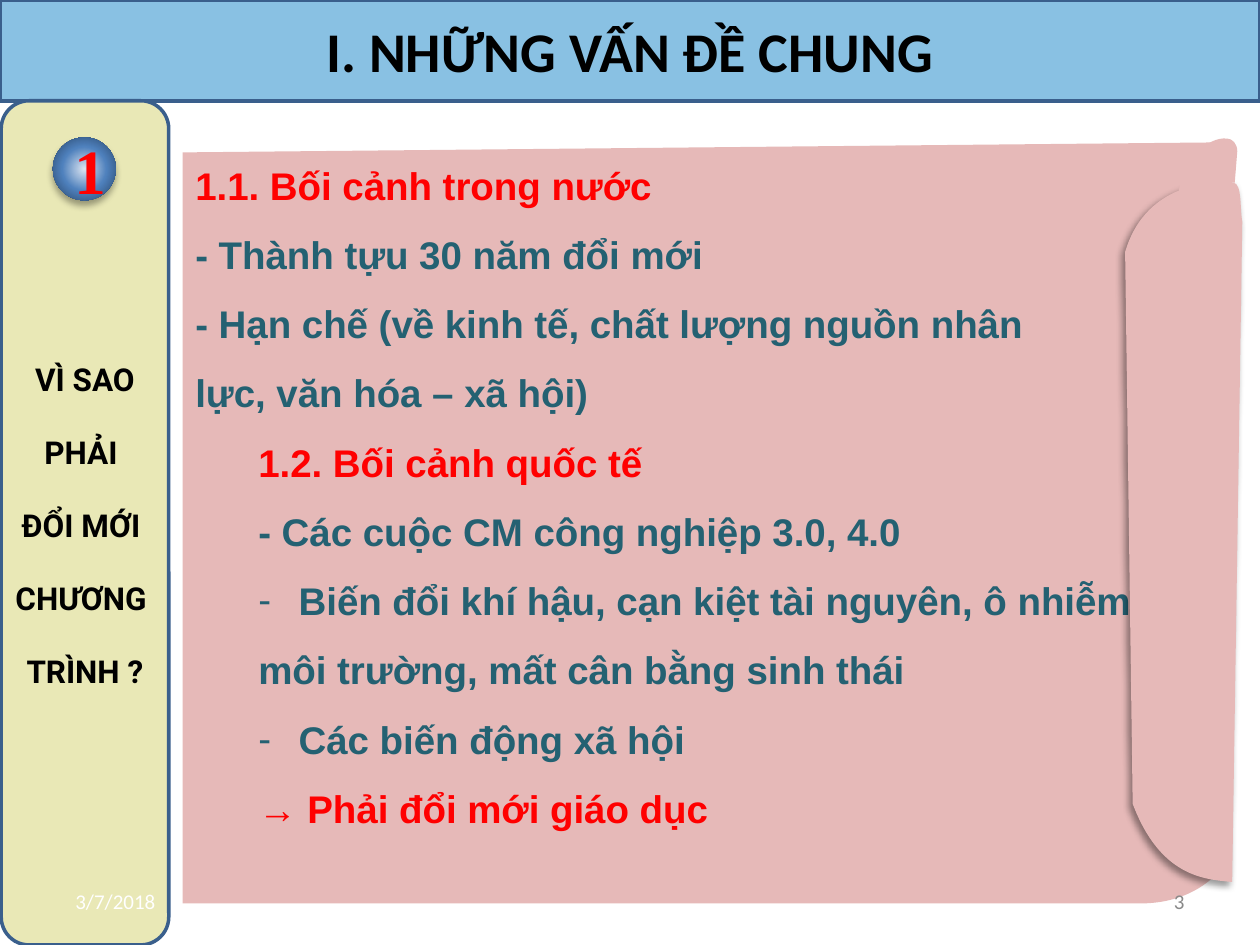
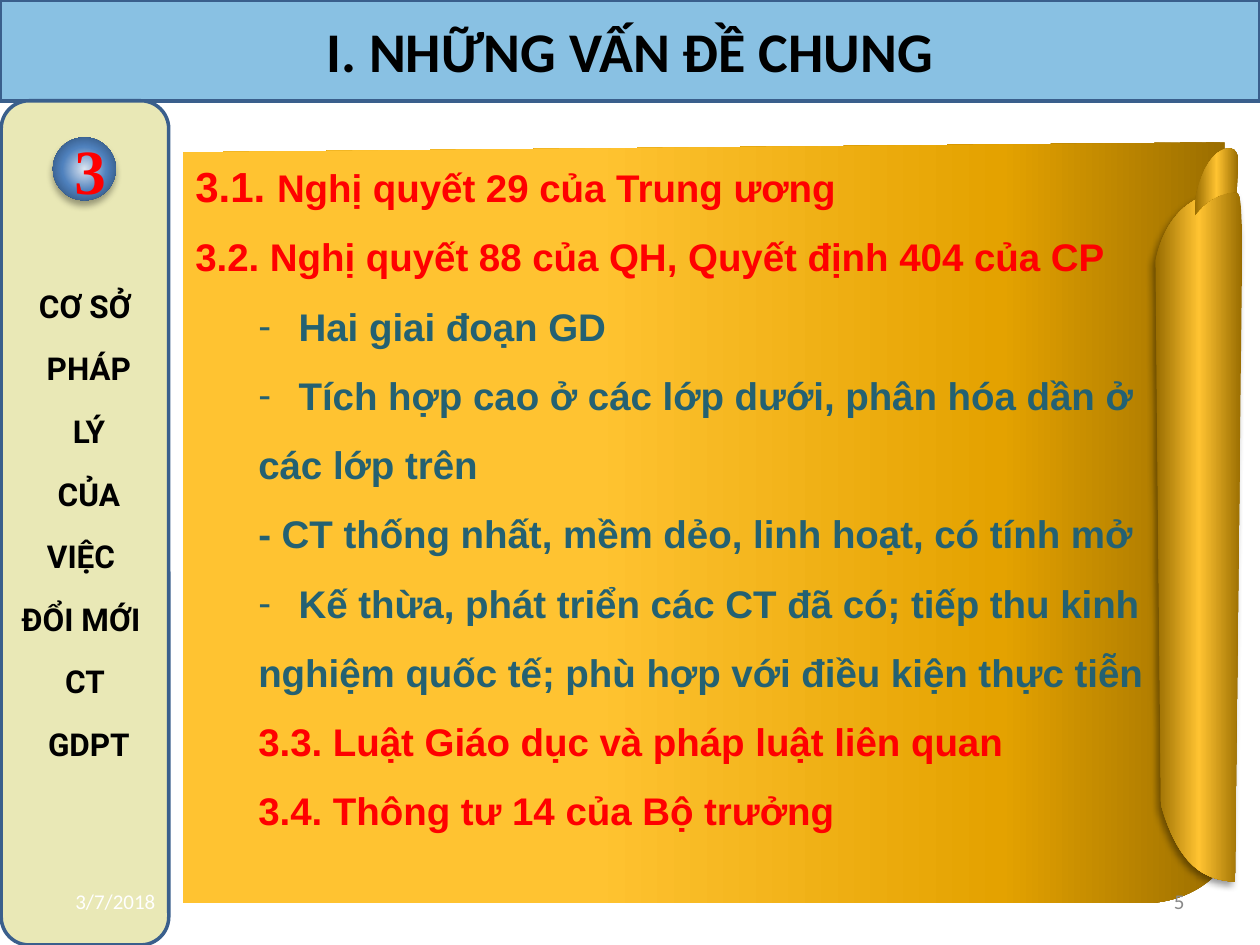
"""Two slides on general issues of the curriculum reform, each a scroll beside a side banner."""
from lxml import etree
from pptx import Presentation
from pptx import util as u
from pptx.dml.color import RGBColor
from pptx.enum import shapes, text
from pptx.oxml import ns

BLACK = RGBColor(0x00, 0x00, 0x00)
WHITE = RGBColor(0xFF, 0xFF, 0xFF)
RED = RGBColor(0xFF, 0x00, 0x00)
TEAL = RGBColor(0x24, 0x61, 0x72)
GREY = RGBColor(0x89, 0x89, 0x89)
SKY = RGBColor(0x89, 0xC1, 0xE3)
NAVY = RGBColor(0x3A, 0x5F, 0x8C)
CREAM = RGBColor(0xE9, 0xE8, 0xB6)
PINK = RGBColor(0xE6, 0xB9, 0xB8)
ICE = RGBColor(0xDC, 0xE6, 0xF2)
BLUE = RGBColor(0x4F, 0x81, 0xBD)
DEEP_BLUE = RGBColor(0x25, 0x40, 0x61)
BRONZE = RGBColor(0x98, 0x6C, 0x00)
AMBER = RGBColor(0xE4, 0xA2, 0x00)
GOLD = RGBColor(0xFF, 0xC3, 0x31)

MARKER_FILL = [(0, ICE), (50, BLUE), (100, DEEP_BLUE)]
GOLD_PAGE = [(0, BRONZE), (22, AMBER), (61, GOLD), (100, GOLD)]
GOLD_ROLL = [(0, BRONZE), (50, GOLD), (100, BRONZE)]

TITLE_FONT = dict(name="Calibri", size=u.Pt(32), bold=True, color=BLACK)
SIDE_FONT = dict(name="Roboto", size=u.Pt(18), bold=True, color=BLACK)
MARKER_FONT = dict(name="Times New Roman", size=u.Pt(36), bold=True, color=RED)
BODY_FONT = dict(name="Arial", size=u.Pt(22), bold=True)
DATE_FONT = dict(name="Calibri", size=u.Pt(12), color=WHITE)
NUMBER_FONT = dict(DATE_FONT, color=GREY)

TITLE_BOX = (0, 0, 10, 0.8)
SIDE_BOX = (0.01, 0.8, 1.33, 6.7)
PAGE_BOX = (1.45, 1.13, 8.33, 6.04)
DATE_BOX = (0.5, 6.95, 2.33, 0.4)
NUMBER_BOX = (7.17, 6.95, 2.33, 0.4)

PAGE_GRID = (833, 604)
PAGE_OUTLINE = [(0, 8), (0, 604), (763, 604), ((802, 603), (825, 581), (833, 563)),
                ((833, 375), (827, 188), (827, 0))]
ROLL_GRID = (93, 591)
ROLL_OUTLINE = [(85, 591), ((63, 589), (28, 587), (6, 529)), (0, 91),
                ((15, 40), (62, 34), (86, 36)), ((93, 37), (91, 57), (93, 67))]
CURL_OUTLINE = [(42, 55), (43, 40), ((54, 3), (75, 0), (81, 1)),
                ((85, 1), (89, 5), (89, 11)), (87, 36), ((76, 36), (57, 39), (42, 55))]

LINE_STYLES = {
    "flush head": dict(color=RED, margin=0.5, indent=-0.5),
    "flush": dict(color=TEAL, margin=0.5, indent=-0.5),
    "head": dict(color=RED, margin=0.5, indent=0),
    "plain": dict(color=TEAL, margin=0.5, indent=0),
    "dash": dict(color=TEAL, margin=0.82, indent=-0.32, bullet="-"),
}

SLIDES = [
    dict(marker="1", number="3", side_space=12, page_fill=PINK, roll_fill=PINK,
         roll_box=(8.93, 1.09, 0.93, 5.91), lift=0.03,
         side=["VÌ SAO", "PHẢI ", "ĐỔI MỚI ", "CHƯƠNG ", "TRÌNH ?"],
         lines=[("flush head", "1.1. Bối cảnh trong nước"),
                ("flush", "- Thành tựu 30 năm đổi mới"),
                ("flush", "- Hạn chế (về kinh tế, chất lượng nguồn nhân"),
                ("flush", "lực, văn hóa – xã hội)"),
                ("head", "1.2. Bối cảnh quốc tế"),
                ("plain", "- Các cuộc CM công nghiệp 3.0, 4.0"),
                ("dash", "Biến đổi khí hậu, cạn kiệt tài nguyên, ô nhiễm"),
                ("plain", "môi trường, mất cân bằng sinh thái"),
                ("dash", "Các biến động xã hội"),
                ("head", "→ Phải đổi mới giáo dục")]),
    dict(marker="3", number="5", side_space=6, page_fill=GOLD_PAGE, roll_fill=GOLD_ROLL,
         roll_box=(9.17, 1.17, 0.69, 5.83), lift=0.06,
         side=["CƠ SỞ", " PHÁP", " LÝ", " CỦA", "VIỆC ", "ĐỔI MỚI ", "CT", " GDPT"],
         lines=[("flush head", "3.1. ", "Nghị quyết 29 của Trung ương"),
                ("flush head", "3.2. Nghị quyết 88 của QH, Quyết định 404 của CP"),
                ("dash", "Hai giai đoạn GD"),
                ("dash", "Tích hợp cao ở các lớp dưới, phân hóa dần ở"),
                ("plain", "các lớp trên"),
                ("plain", "- CT thống nhất, mềm dẻo, linh hoạt, có tính mở"),
                ("dash", "Kế thừa, phát triển các CT đã có; tiếp thu kinh"),
                ("plain", "nghiệm quốc tế; phù hợp với điều kiện thực tiễn"),
                ("head", "3.3. Luật Giáo dục và pháp luật liên quan"),
                ("head", "3.4. Thông tư 14 của Bộ trưởng")]),
]


def inches(box):
    """Turn a box of numbers into lengths."""
    return [u.Inches(value) for value in box]


def set_all(target, **values):
    """Set every given attribute on the target."""
    for name, value in values.items():
        setattr(target, name, value)


def place(shape, box):
    """Move a shape to a box."""
    set_all(shape, **dict(zip(("left", "top", "width", "height"), inches(box))))


def set_font(font, color, **values):
    """Apply a font format."""
    set_all(font, **values)
    font.color.rgb = color


def add_xml(parent, tag, **attributes):
    """Append a drawing element to a parent element."""
    names = {name: str(value) for name, value in attributes.items()}
    return etree.SubElement(parent, ns.qn(tag), names)


def paint(shape, fill, radial=False):
    """Fill a shape with a colour or with gradient stops."""
    if isinstance(fill, RGBColor):
        shape.fill.solid()
        shape.fill.fore_color.rgb = fill
        return
    shape.fill.gradient()
    shape.fill.gradient_angle = 180
    gradient = shape.element.spPr.find(ns.qn("a:gradFill"))
    stops = gradient.find(ns.qn("a:gsLst"))
    for stop in list(stops):
        stops.remove(stop)
    for position, color in fill:
        stop = add_xml(stops, "a:gs", pos=position * 1000)
        add_xml(stop, "a:srgbClr", val=color)
    if radial:
        gradient.remove(gradient.find(ns.qn("a:lin")))
        circle = add_xml(gradient, "a:path", path="circle")
        add_xml(circle, "a:fillToRect", l=50000, t=50000, r=50000, b=50000)


def outline(shape):
    """Draw the border shared by the title band and the side banner."""
    shape.line.color.rgb = NAVY
    shape.line.width = u.Pt(2)


def add_shadow(shape, opacity, direction):
    """Cast a soft black shadow in a direction given in degrees."""
    effects = shape.element.spPr.find(ns.qn("a:effectLst"))
    shadow = add_xml(effects, "a:outerShdw", blurRad=u.Pt(4), dist=u.Pt(3),
                     dir=direction * 60000, algn="ctr", rotWithShape=0)
    color = add_xml(shadow, "a:srgbClr", val=BLACK)
    add_xml(color, "a:alpha", val=opacity * 1000)


def is_curve(part):
    """Tell whether a part of a path is a cubic curve."""
    return isinstance(part[0], tuple)


def bend(shape, path):
    """Turn the three lines that stand for each curve of a path into that curve."""
    lines = iter(list(shape.element.iter(ns.qn("a:lnTo"))))
    for part in path[1:]:
        line = next(lines)
        if is_curve(part):
            curve = etree.Element(ns.qn("a:cubicBezTo"))
            line.addprevious(curve)
            for segment in (line, next(lines), next(lines)):
                curve.append(segment[0])
                segment.getparent().remove(segment)


def add_outline(slide, box, grid, path, fill):
    """Draw a filled path, given on a grid, stretched to a box."""
    left, top, width, height = box
    knots = [point for part in path for point in (part if is_curve(part) else [part])]
    points = [(u.Inches(left + x * width / grid[0]), u.Inches(top + y * height / grid[1]))
              for x, y in knots]
    builder = slide.shapes.build_freeform(*points[0], scale=1.0)
    builder.add_line_segments(points[1:], close=True)
    shape = builder.convert_to_shape()
    bend(shape, path)
    shape.shadow.inherit = False
    shape.line.fill.background()
    paint(shape, fill)
    return shape


def add_title(slide, box):
    """Turn the title placeholder into the band across the top."""
    title = slide.shapes.title
    place(title, box)
    paint(title, SKY)
    outline(title)
    frame = title.text_frame
    frame.text = "I. NHỮNG VẤN ĐỀ CHUNG"
    set_all(frame, auto_size=text.MSO_AUTO_SIZE.NONE, vertical_anchor=text.MSO_ANCHOR.MIDDLE)
    frame.paragraphs[0].alignment = text.PP_ALIGN.CENTER
    set_font(frame.paragraphs[0].runs[0].font, **TITLE_FONT)


def add_side_banner(slide, box, lines, space):
    """Draw the rounded side banner with one short line per paragraph."""
    banner = slide.shapes.add_shape(shapes.MSO_SHAPE.ROUNDED_RECTANGLE, *inches(box))
    banner.shadow.inherit = False
    paint(banner, CREAM)
    outline(banner)
    frame = banner.text_frame
    set_all(frame, margin_left=0, margin_right=0, margin_top=u.Inches(0.05),
            margin_bottom=u.Inches(0.05), vertical_anchor=text.MSO_ANCHOR.MIDDLE, word_wrap=True)
    frame.text = "\n".join(lines)
    for index, paragraph in enumerate(frame.paragraphs):
        set_all(paragraph, alignment=text.PP_ALIGN.CENTER, line_spacing=1.1,
                space_before=u.Pt(space if index else 0), space_after=u.Pt(6))
        set_font(paragraph.runs[0].font, **SIDE_FONT)


def add_marker(slide, box, label):
    """Draw the numbered ball near the top of the side banner."""
    left, top = box[0] + 0.41, box[1] + 0.29
    ball = slide.shapes.add_shape(shapes.MSO_SHAPE.OVAL, *inches((left, top, 0.5, 0.5)))
    ball.shadow.inherit = False
    ball.line.fill.background()
    paint(ball, MARKER_FILL, radial=True)
    add_shadow(ball, 35, 90)
    ball.text_frame.text = label
    ball.text_frame.vertical_anchor = text.MSO_ANCHOR.MIDDLE
    paragraph = ball.text_frame.paragraphs[0]
    paragraph.alignment = text.PP_ALIGN.LEFT
    set_font(paragraph.runs[0].font, **MARKER_FONT)


def format_line(paragraph, pieces, color, margin, indent, bullet=None):
    """Write one line of the list; the first of several pieces is larger."""
    properties = paragraph._p.get_or_add_pPr()
    properties.set("marL", str(u.Inches(margin)))
    properties.set("indent", str(u.Inches(indent)))
    if bullet:
        add_xml(properties, "a:buFont", typeface="Arial")
        add_xml(properties, "a:buChar", char=bullet)
    else:
        add_xml(properties, "a:buNone")
    set_all(paragraph, line_spacing=1.5, space_before=u.Pt(0), space_after=u.Pt(0),
            alignment=text.PP_ALIGN.LEFT)
    for piece in pieces:
        run = paragraph.add_run()
        run.text = piece
        set_font(run.font, color=color, **BODY_FONT)
    if len(pieces) > 1:
        paragraph.runs[0].font.size = u.Pt(24)


def add_scroll(slide, box, content):
    """Draw the page, lay the list on it and put the rolled edge on top."""
    page = add_outline(slide, box, PAGE_GRID, PAGE_OUTLINE, content["page_fill"])
    left, top, width, height = box
    body = slide.placeholders[1]
    place(body, (left, top - content["lift"], width, height))
    page.element.addnext(body.element)
    frame = body.text_frame
    set_all(frame, auto_size=text.MSO_AUTO_SIZE.NONE, vertical_anchor=text.MSO_ANCHOR.TOP,
            margin_top=0, word_wrap=True)
    for index, (style, *pieces) in enumerate(content["lines"]):
        paragraph = frame.add_paragraph() if index else frame.paragraphs[0]
        format_line(paragraph, pieces, **LINE_STYLES[style])
    roll_box, roll_fill = content["roll_box"], content["roll_fill"]
    roll = add_outline(slide, roll_box, ROLL_GRID, ROLL_OUTLINE, roll_fill)
    add_shadow(roll, 40, 135)
    add_outline(slide, roll_box, ROLL_GRID, CURL_OUTLINE, roll_fill)


def add_footer(slide, box, label, alignment, font):
    """Write one footer text."""
    frame = slide.shapes.add_textbox(*inches(box)).text_frame
    set_all(frame, word_wrap=True, vertical_anchor=text.MSO_ANCHOR.MIDDLE, text=label)
    frame.paragraphs[0].alignment = alignment
    set_font(frame.paragraphs[0].runs[0].font, **font)


def add_slide(presentation, content):
    """Build one slide from its content."""
    slide = presentation.slides.add_slide(presentation.slide_layouts[1])
    add_title(slide, TITLE_BOX)
    add_side_banner(slide, SIDE_BOX, content["side"], content["side_space"])
    add_scroll(slide, PAGE_BOX, content)
    add_marker(slide, SIDE_BOX, content["marker"])
    add_footer(slide, DATE_BOX, "3/7/2018", text.PP_ALIGN.LEFT, DATE_FONT)
    add_footer(slide, NUMBER_BOX, content["number"], text.PP_ALIGN.RIGHT, NUMBER_FONT)


def main():
    """Build and save the presentation."""
    presentation = Presentation()
    set_all(presentation, slide_width=u.Inches(10), slide_height=u.Inches(7.5))
    for content in SLIDES:
        add_slide(presentation, content)
    presentation.save("out.pptx")


if __name__ == "__main__":
    main()
